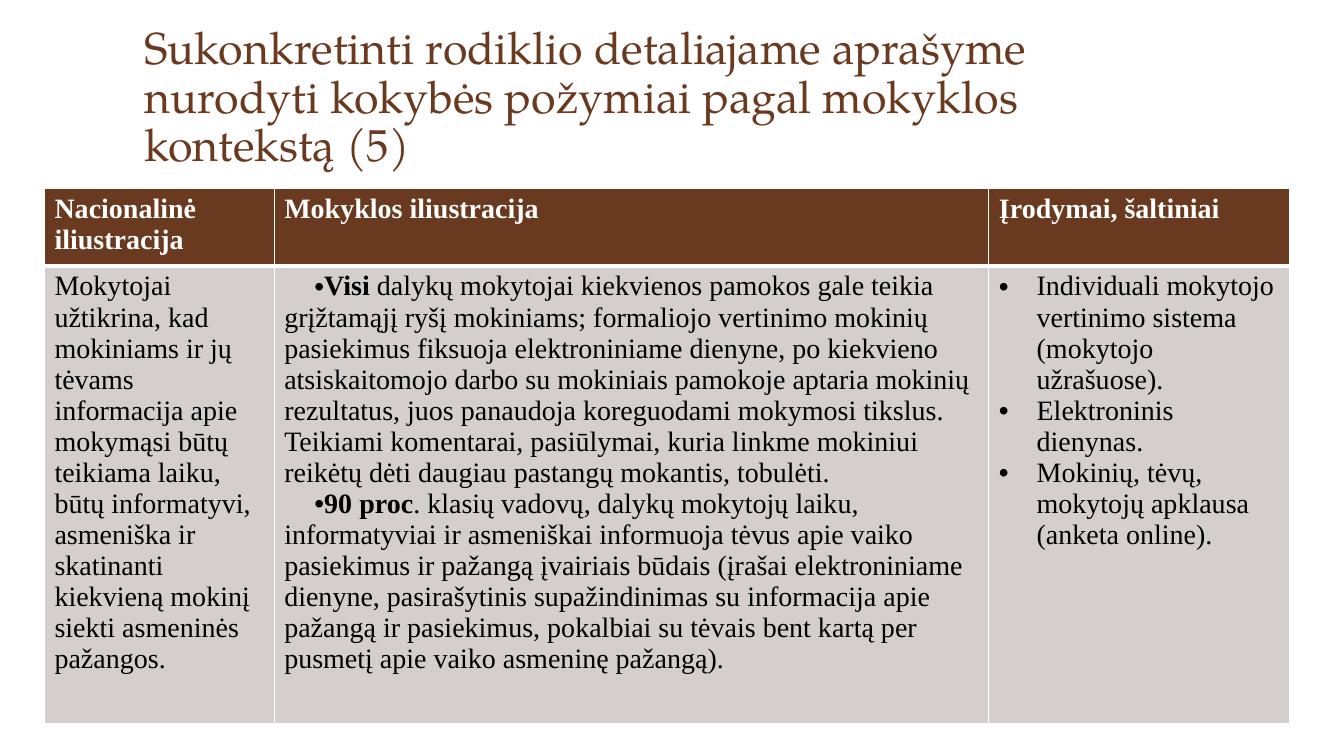
from lxml.etree import SubElement as Sub
from pptx import Presentation
from pptx.dml.color import RGBColor
from pptx.enum.text import MSO_ANCHOR as Anchor
from pptx.oxml.ns import qn
from pptx.util import Cm, Pt

BROWN = RGBColor(0x6A, 0x3A, 0x20)
GREY = RGBColor(0xD4, 0xCE, 0xCD)
WHITE = RGBColor(0xFF, 0xFF, 0xFF)
BLACK = RGBColor(0, 0, 0)
SERIF = "Times New Roman"
TITLE = ("Sukonkretinti rodiklio detaliajame aprašyme nurodyti kokybės "
         "požymiai pagal mokyklos kontekstą (5)")
HEADS = ["Nacionalinė iliustracija", "Mokyklos iliustracija", "Įrodymai, šaltiniai"]
NATION = ("Mokytojai užtikrina, kad mokiniams ir jų tėvams informacija apie "
          "mokymąsi būtų teikiama laiku, būtų informatyvi, asmeniška ir "
          "skatinanti kiekvieną mokinį siekti asmeninės pažangos.")
SCHOOL = [
    [("Visi", True),
     (" dalykų mokytojai kiekvienos pamokos gale teikia grįžtamąjį ryšį "
      "mokiniams; formaliojo vertinimo mokinių pasiekimus fiksuoja "
      "elektroniniame dienyne, po kiekvieno atsiskaitomojo darbo su mokiniais "
      "pamokoje aptaria mokinių rezultatus, juos panaudoja koreguodami mokymosi "
      "tikslus. Teikiami komentarai, pasiūlymai, kuria linkme mokiniui reikėtų "
      "dėti daugiau pastangų mokantis, tobulėti.", False)],
    [("90 proc", True),
     (". klasių vadovų, dalykų mokytojų laiku, informatyviai ir asmeniškai "
      "informuoja tėvus apie vaiko pasiekimus ir pažangą įvairiais būdais "
      "(įrašai elektroniniame dienyne, pasirašytinis supažindinimas su "
      "informacija apie pažangą ir pasiekimus, pokalbiai su tėvais bent kartą "
      "per pusmetį apie vaiko asmeninę pažangą).", False)],
]
PROOFS = ["Individuali mokytojo vertinimo sistema (mokytojo užrašuose).",
          "Elektroninis dienynas.",
          "Mokinių, tėvų, mokytojų apklausa (anketa online)."]


def add_run(para, text, font, size, color, bold=False):
    """Append one styled run to a paragraph."""
    run = para.add_run()
    run.text = text
    run.font.name, run.font.size, run.font.bold = font, Pt(size), bold
    run.font.color.rgb = color


def add_bullet(para, left, indent):
    """Give a paragraph a round bullet and its indents."""
    props = para._p.get_or_add_pPr()
    props.set("marL", str(Cm(left)))
    props.set("indent", str(Cm(indent)))
    Sub(props, qn("a:buFont"), typeface="Arial")
    Sub(props, qn("a:buChar"), char="•")


def add_edges(cell, base):
    """Draw white borders, with the bottom one of the given width."""
    props = cell._tc.get_or_add_tcPr()
    for pos, (side, width) in enumerate(zip("LRTB", (1, 1, 1, base))):
        line = props.makeelement(qn(f"a:ln{side}"), w=str(Pt(width)))
        fill = Sub(line, qn("a:solidFill"))
        Sub(fill, qn("a:srgbClr"), val=str(WHITE))
        props.insert(pos, line)


def fill_cell(cell, paras, back, color, base=1, marks=None):
    """Fill a cell with paragraphs of (text, bold) runs."""
    cell.fill.solid()
    cell.fill.fore_color.rgb = back
    add_edges(cell, base)
    frame = cell.text_frame
    for pos, runs in enumerate(paras):
        para = frame.add_paragraph() if pos else frame.paragraphs[0]
        if marks:
            add_bullet(para, *marks)
        for text, bold in runs:
            add_run(para, text, SERIF, 20, color, bold)


def add_title(slide):
    """Add the slide heading."""
    box = slide.shapes.add_textbox(Cm(3.38), Cm(1.19), Cm(27.08), Cm(3.25))
    frame = box.text_frame
    frame.word_wrap = True
    frame.vertical_anchor = Anchor.BOTTOM
    para = frame.paragraphs[0]
    para.line_spacing = 0.9
    add_run(para, TITLE, "TeX Gyre Pagella", 32, BROWN)


def add_grid(slide):
    """Add the table of illustrations and evidence."""
    shape = slide.shapes.add_table(2, 3, Cm(1.12), Cm(4.75), Cm(31.39), Cm(13.18))
    table = shape.table
    for col, width in zip(table.columns, (5.79, 18.01, 7.59)):
        col.width = Cm(width)
    for row, height in zip(table.rows, (1.65, 11.53)):
        row.height = Cm(height)
    for col, head in enumerate(HEADS):
        fill_cell(table.cell(0, col), [[(head, True)]], BROWN, WHITE, 3)
    bodies = (([[(NATION, False)]], None),
              (SCHOOL, (0, 0.76)),
              ([[(text, False)] for text in PROOFS], (0.95, -0.95)))
    for col, (paras, marks) in enumerate(bodies):
        fill_cell(table.cell(1, col), paras, GREY, BLACK, marks=marks)


def main():
    """Build and save the slide."""
    deck = Presentation()
    deck.slide_width, deck.slide_height = Cm(33.87), Cm(19.05)
    slide = deck.slides.add_slide(deck.slide_layouts[6])
    add_title(slide)
    add_grid(slide)
    deck.save("out.pptx")


if __name__ == "__main__":
    main()
